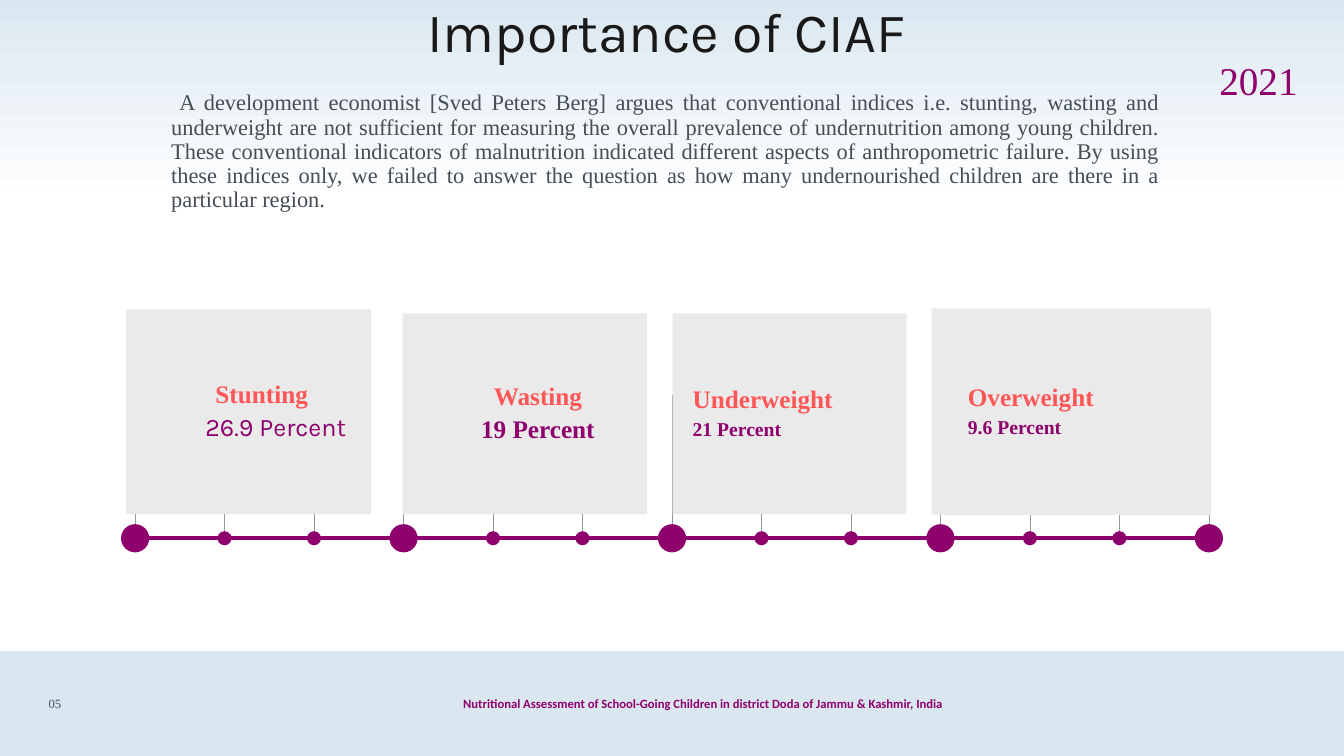
from lxml.etree import SubElement
from pptx import Presentation
from pptx.dml.color import RGBColor
from pptx.enum.shapes import MSO_CONNECTOR, MSO_SHAPE
from pptx.enum.text import MSO_ANCHOR, PP_ALIGN
from pptx.oxml.ns import qn
from pptx.util import Emu, Pt

PX = 9144  # 100 px to the inch
PLUM = RGBColor(0x8E, 0x00, 0x6C)
CORAL = RGBColor(0xFF, 0x57, 0x57)
SLATE = RGBColor(0x45, 0x4D, 0x55)
INK = RGBColor(0x19, 0x19, 0x19)
TICK_GREY = RGBColor(0x93, 0x99, 0xA1)
CARD_GREY = RGBColor(0xEA, 0xEA, 0xEA)
PALE_BLUE = RGBColor(0xDA, 0xE7, 0xF0)
WHITE = RGBColor(0xFF, 0xFF, 0xFF)
SERIF, KARLA, CALIBRI = "Times New Roman", "Karla", "Calibri"
LEFT, CENTER, RIGHT, JUSTIFY = (
    PP_ALIGN.LEFT, PP_ALIGN.CENTER, PP_ALIGN.RIGHT, PP_ALIGN.JUSTIFY)
TOP, MIDDLE = MSO_ANCHOR.TOP, MSO_ANCHOR.MIDDLE

ARGUMENT = (
    " A development economist [Sved Peters Berg] argues that conventional indices i.e. "
    "stunting, wasting and underweight are not sufficient for measuring the overall "
    "prevalence of undernutrition among young children. These conventional indicators of "
    "malnutrition indicated different aspects of anthropometric failure. By using these "
    "indices only, we failed to answer the question as how many undernourished children "
    "are there in a particular region.")
STUDY = ("Nutritional Assessment of School-Going Children in district Doda of "
         "Jammu & Kashmir, India")

# box, text, alignment, anchor, insets, line spacing, font
CAPTIONS = [
    ((161, 0, 1000, 75), "Importance of CIAF", CENTER, TOP, (10, 5, 10, 5), 0.9,
     dict(name=KARLA, size=Pt(39.6), color=INK)),
    ((1182, 52, 105, 60), "2021", RIGHT, MIDDLE, (0, 0, 0, 0), 0.9,
     dict(name=SERIF, size=Pt(28), color=PLUM)),
    ((352, 678, 690, 40), STUDY, CENTER, MIDDLE, (10, 5, 10, 5), 1.0,
     dict(name=CALIBRI, size=Pt(9), bold=True, color=PLUM)),
    ((31, 678, 47, 40), "05", CENTER, MIDDLE, (10, 5, 10, 5), 1.0,
     dict(name=SERIF, size=Pt(9), color=SLATE)),
    ((160, 86, 1000, 158), ARGUMENT, JUSTIFY, TOP, (10, 5, 10, 5), 0.9,
     dict(name=SERIF, size=Pt(16), color=SLATE)),
]

# box, indicator, share, alignment, (indicator indent, share indent), share font
CARDS = [
    ((125, 307, 243, 203), "Stunting", "26.9 Percent", CENTER, (16, 44),
     dict(name=KARLA, size=Pt(18), bold=False)),
    ((399, 311, 243, 199), "Wasting", "19 Percent", CENTER, (16, 16),
     dict(name=SERIF, size=Pt(18), bold=True)),
    ((667, 311, 232, 199), "Underweight", "21 Percent", LEFT, (0, 0),
     dict(name=SERIF, size=Pt(14), bold=True)),
    ((924, 306, 277, 205), "Overweight", "9.6 Percent", LEFT, (16, 16),
     dict(name=SERIF, size=Pt(14), bold=True)),
]
INDICATOR_FONT = dict(name=SERIF, size=Pt(18), bold=True, color=CORAL)

AXIS_LEFT, AXIS_RIGHT, AXIS_Y = 134, 1199, 534
STEPS, STEPS_PER_STAGE = 12, 3
STAGE_MARK = dict(dot=28, tick_top=392)
STEP_MARK = dict(dot=14, tick_top=486)


def emu(*lengths):
    return [Emu(round(length * PX)) for length in lengths]


def set_font(font, formats):
    for attribute, value in formats.items():
        if attribute == "color":
            font.color.rgb = value
        else:
            setattr(font, attribute, value)


def set_frame(frame, anchor, insets):
    frame.word_wrap = True
    frame.vertical_anchor = anchor
    for side, inset in zip(("left", "top", "right", "bottom"), emu(*insets)):
        setattr(frame, f"margin_{side}", inset)


def add_plain(shapes, preset, box, color):
    """Add a preset shape with a solid fill, no outline and no shadow."""
    plain = shapes.add_shape(preset, *emu(*box))
    plain.shadow.inherit = False
    plain.line.fill.background()
    plain.fill.solid()
    plain.fill.fore_color.rgb = color
    return plain


def add_rule(shapes, start, end, color, width):
    rule = shapes.add_connector(MSO_CONNECTOR.STRAIGHT, *emu(*start, *end))
    rule.line.color.rgb = color
    rule.line.width = Pt(width)
    SubElement(rule._element.spPr, qn("a:effectLst"))


def add_backdrop(shapes):
    add_plain(shapes, MSO_SHAPE.RECTANGLE, (0, 646, 1333, 104), PALE_BLUE)
    sky = add_plain(shapes, MSO_SHAPE.RECTANGLE, (0, -1, 1333, 201), PALE_BLUE)
    sky.fill.gradient()
    sky.fill.gradient_angle = 270
    for stop, position, color in zip(sky.fill.gradient_stops, (0, 1), (PALE_BLUE, WHITE)):
        stop.position = position
        stop.color.rgb = color


def add_timeline(shapes):
    add_rule(shapes, (AXIS_LEFT, AXIS_Y), (AXIS_RIGHT, AXIS_Y), PLUM, 2.84)
    for step in range(STEPS + 1):
        x = AXIS_LEFT + step * (AXIS_RIGHT - AXIS_LEFT) / STEPS
        mark = STEP_MARK if step % STEPS_PER_STAGE else STAGE_MARK
        dot = mark["dot"]
        add_rule(shapes, (x, AXIS_Y), (x, mark["tick_top"]), TICK_GREY, 0.5)
        add_plain(shapes, MSO_SHAPE.OVAL,
                  (x - dot / 2, AXIS_Y - dot / 2, dot, dot), PLUM)


def add_card(shapes, box, indicator, share, alignment, indents, share_font):
    frame = add_plain(shapes, MSO_SHAPE.RECTANGLE, box, CARD_GREY).text_frame
    set_frame(frame, MIDDLE, (20, 5, 10, 5))
    fonts = (INDICATOR_FONT, dict(share_font, color=PLUM))
    lines = (frame.paragraphs[0], frame.add_paragraph())
    for line, words, font, indent in zip(lines, (indicator, share), fonts, emu(*indents)):
        line.alignment = alignment
        line.line_spacing = 0.9
        line.space_before = Pt(4)
        line._p.get_or_add_pPr().set("marL", str(indent))
        run = line.add_run()
        run.text = words
        set_font(run.font, font)


def add_caption(shapes, box, words, alignment, anchor, insets, spacing, font):
    frame = shapes.add_textbox(*emu(*box)).text_frame
    set_frame(frame, anchor, insets)
    line = frame.paragraphs[0]
    line.alignment = alignment
    line.line_spacing = spacing
    run = line.add_run()
    run.text = words
    set_font(run.font, font)


def main():
    deck = Presentation()
    deck.slide_width, deck.slide_height = emu(1333, 750)
    shapes = deck.slides.add_slide(deck.slide_layouts[6]).shapes
    add_backdrop(shapes)
    add_timeline(shapes)
    for card in CARDS:
        add_card(shapes, *card)
    for caption in CAPTIONS:
        add_caption(shapes, *caption)
    deck.save("out.pptx")


if __name__ == "__main__":
    main()
